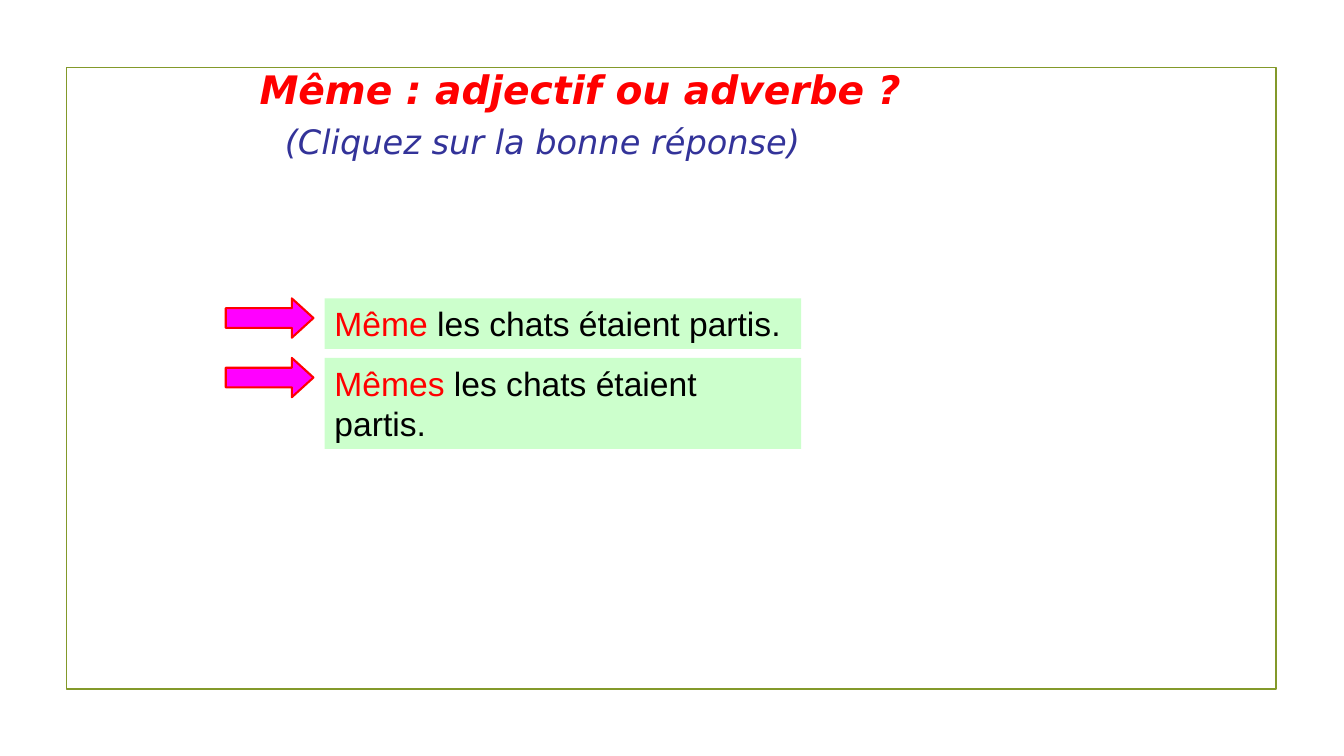
from dataclasses import dataclass

from pptx import Presentation
from pptx.dml.color import RGBColor
from pptx.enum.shapes import MSO_SHAPE as Preset
from pptx.enum.text import MSO_ANCHOR as Anchor, PP_ALIGN as Align
from pptx.shapes.autoshape import Shape
from pptx.slide import Slide
from pptx.util import Cm, Pt

RED = "FF0000"
ANSWER_TOP, ANSWER_PITCH = 7.52, 1.5


@dataclass(frozen=True)
class Area:
    """Left, top, width and height in centimetres."""
    left: float
    top: float
    width: float
    height: float

    def lengths(self) -> list[Cm]:
        return [Cm(value) for value in (self.left, self.top, self.width, self.height)]


@dataclass(frozen=True)
class Span:
    text: str
    size: float
    color: str
    font: str = "Arial"
    bold: bool = False
    italic: bool = False


@dataclass(frozen=True)
class Heading:
    area: Area
    span: Span
    align: Align


@dataclass(frozen=True)
class Answer:
    word: str
    height: float


HEADINGS = [
    Heading(Area(5.54, 1.52, 18.16, 1.45),
            Span("Même : adjectif ou adverbe ?", 28, RED, "DejaVu Sans", True, True),
            Align.CENTER),
    Heading(Area(6.93, 2.92, 16.31, 1.3),
            Span("(Cliquez sur la bonne réponse)", 24, "333399", "DejaVu Sans", False, True),
            Align.LEFT),
]
ANSWERS = [Answer("Même", 1.27), Answer("Mêmes", 2.29)]


def rgb(color: str) -> RGBColor:
    return RGBColor.from_string(color)


def write(box: Shape, spans: list[Span], align: Align = Align.LEFT) -> None:
    frame = box.text_frame
    frame.word_wrap = True
    frame.vertical_anchor = Anchor.TOP
    para = frame.paragraphs[0]
    para.alignment = align
    for span in spans:
        run = para.add_run()
        run.text = span.text
        run.font.name = span.font
        run.font.size = Pt(span.size)
        run.font.bold = span.bold
        run.font.italic = span.italic
        run.font.color.rgb = rgb(span.color)


def draw_shape(page: Slide, preset: Preset, area: Area, fill: str | None = None,
               line: str | None = None, weight: float = 1) -> Shape:
    shape = page.shapes.add_shape(preset, *area.lengths())
    shape.shadow.inherit = False
    if fill:
        shape.fill.solid()
        shape.fill.fore_color.rgb = rgb(fill)
    else:
        shape.fill.background()
    if line:
        shape.line.color.rgb = rgb(line)
        shape.line.width = Pt(weight)
    else:
        shape.line.fill.background()
    return shape


def draw_heading(page: Slide, heading: Heading) -> None:
    box = page.shapes.add_textbox(*heading.area.lengths())
    write(box, [heading.span], heading.align)


def draw_answer(page: Slide, answer: Answer, top: float) -> None:
    box = draw_shape(page, Preset.RECTANGLE, Area(8.18, top, 12.01, answer.height), "CCFFCC")
    write(box, [Span(answer.word, 24, RED),
                Span(" les chats étaient partis.", 24, "000000")])
    arrow = draw_shape(page, Preset.RIGHT_ARROW, Area(5.69, top, 2.21, 0.99),
                       "FF00FF", RED, 1.5)
    arrow.adjustments[0] = 0.5
    arrow.adjustments[1] = 0.55


def main() -> None:
    deck = Presentation()
    deck.slide_width, deck.slide_height = Cm(33.87), Cm(19.05)
    page = deck.slides.add_slide(deck.slide_layouts[6])

    # Frame
    draw_shape(page, Preset.RECTANGLE, Area(1.68, 1.7, 30.48, 15.67), None, "83992A", 1.25)

    # Title and instruction
    for heading in HEADINGS:
        draw_heading(page, heading)

    # Answers with their arrows
    for row, answer in enumerate(ANSWERS):
        draw_answer(page, answer, ANSWER_TOP + row * ANSWER_PITCH)

    deck.save("out.pptx")


if __name__ == "__main__":
    main()
